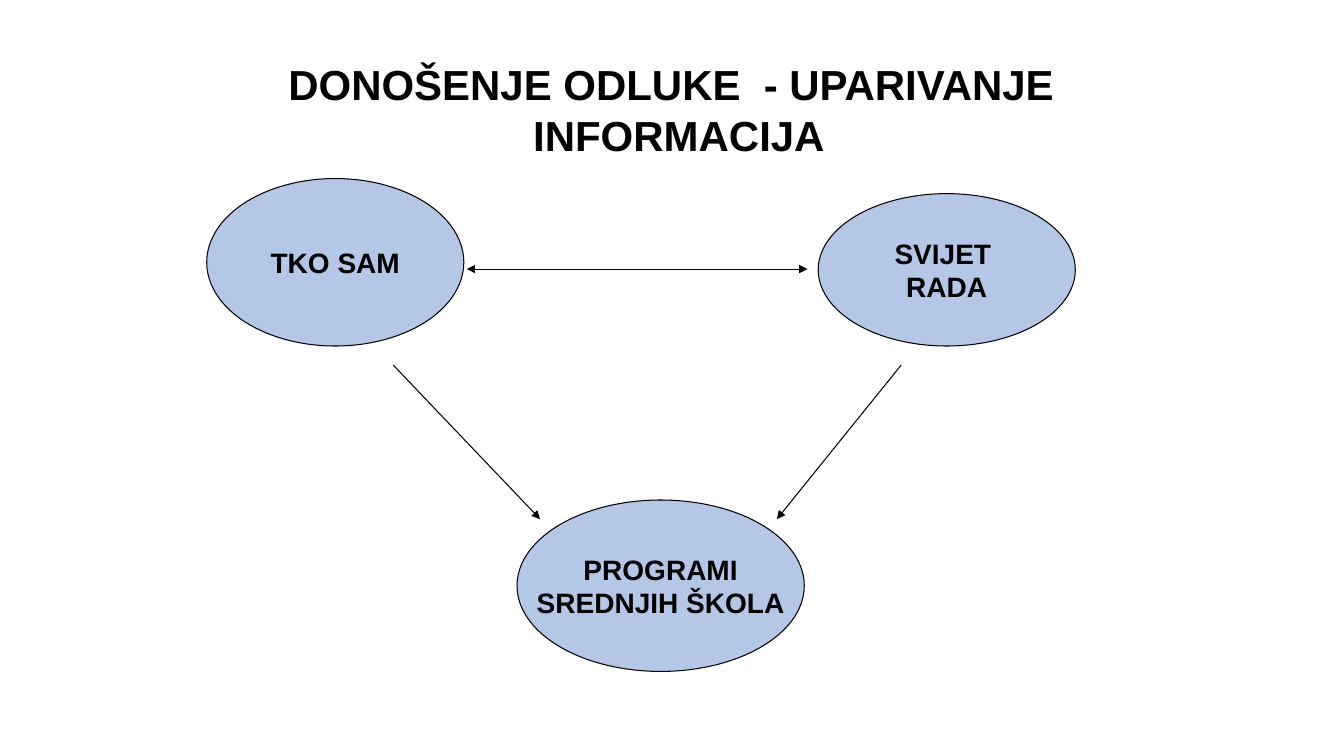
"""Build a slide on matching information when making a decision."""
from lxml.etree import SubElement
from pptx import Presentation
from pptx.dml.color import RGBColor
from pptx.enum.shapes import MSO_CONNECTOR, MSO_SHAPE
from pptx.enum.text import MSO_ANCHOR, PP_ALIGN
from pptx.oxml.ns import qn
from pptx.util import Cm, Pt

COLORS = {"ink": "000000", "oval": "B4C7E7"}


def style_paragraph(para, size):
    para.alignment = PP_ALIGN.CENTER
    para.font.name = "Arial"
    para.font.size = Pt(size)
    para.font.bold = True
    para.font.color.rgb = RGBColor.from_string(COLORS["ink"])


deck = Presentation()
deck.slide_width = Cm(33.87)
deck.slide_height = Cm(19.05)
page = deck.slides.add_slide(deck.slide_layouts[6])

title = page.shapes.add_textbox(Cm(4.78), Cm(1.3), Cm(24.28), Cm(2.8))
title.text_frame.word_wrap = True
para = title.text_frame.paragraphs[0]
para.text = "DONOŠENJE ODLUKE  - UPARIVANJE INFORMACIJA "
para.line_spacing = 1.03
style_paragraph(para, 30)
properties = para._p.get_or_add_pPr()
properties.set("marL", str(Cm(0.64)))
properties.set("indent", str(Cm(-0.64)))

ovals = [
    ("PROGRAMI\nSREDNJIH ŠKOLA", 13.03, 12.6, 7.24, 4.32),
    ("SVIJET \nRADA", 20.62, 4.88, 6.48, 3.84),
    ("TKO SAM", 5.21, 4.5, 6.48, 4.22),
]
for label, left, top, width, height in ovals:
    oval = page.shapes.add_shape(
        MSO_SHAPE.OVAL, Cm(left), Cm(top), Cm(width), Cm(height))
    oval.shadow.inherit = False
    oval.fill.solid()
    oval.fill.fore_color.rgb = RGBColor.from_string(COLORS["oval"])
    oval.line.color.rgb = RGBColor.from_string(COLORS["ink"])
    oval.line.width = Pt(0.75)
    frame = oval.text_frame
    frame.text = label
    frame.word_wrap = False
    frame.vertical_anchor = MSO_ANCHOR.MIDDLE
    for para in frame.paragraphs:
        style_paragraph(para, 20)

arrows = [
    (9.91, 9.2, 13.61, 13.08, 0.75, ["tailEnd"]),
    (22.71, 9.2, 19.58, 13.08, 0.75, ["tailEnd"]),
    (11.76, 6.78, 20.35, 6.78, 0.5, ["headEnd", "tailEnd"]),
]
for start_x, start_y, end_x, end_y, weight, heads in arrows:
    arrow = page.shapes.add_connector(
        MSO_CONNECTOR.STRAIGHT, Cm(start_x), Cm(start_y), Cm(end_x), Cm(end_y))
    arrow.line.color.rgb = RGBColor.from_string(COLORS["ink"])
    arrow.line.width = Pt(weight)
    for head in heads:
        SubElement(arrow.line._get_or_add_ln(), qn(f"a:{head}"), type="triangle")
    SubElement(arrow._element.spPr, qn("a:effectLst"))

deck.save("out.pptx")
